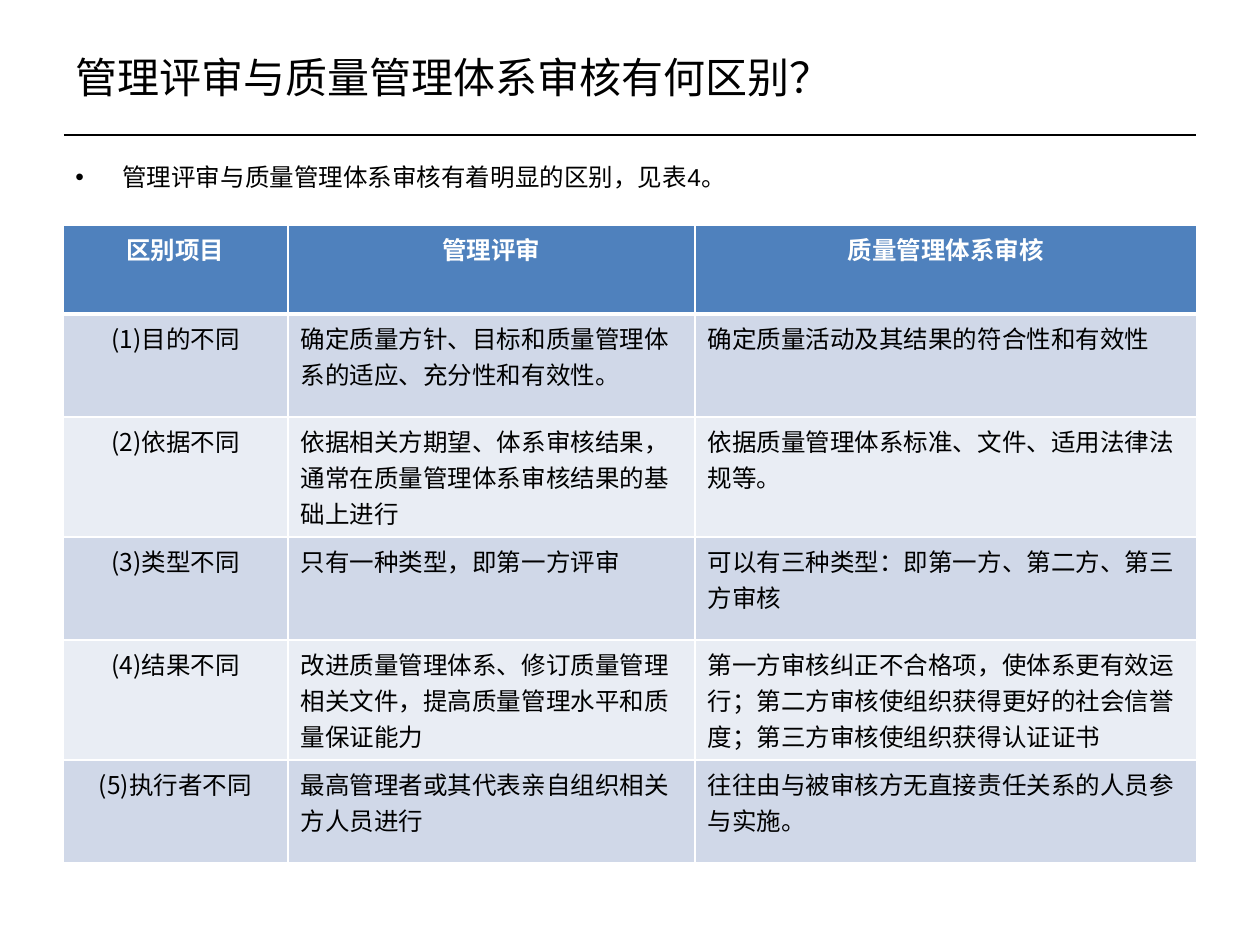
from typing import NamedTuple

import pptx
import pptx.dml.color
import pptx.enum.shapes
import pptx.enum.text
import pptx.oxml
import pptx.oxml.ns
import pptx.util
from lxml import etree

PX = 914400 / 126
ALIGN = pptx.enum.text.PP_ALIGN
ANCHOR = pptx.enum.text.MSO_ANCHOR
CJK_FONT = "Noto Sans CJK SC"
BLACK, WHITE, HEADER_BLUE = "000000", "FFFFFF", "4F81BD"
BANDS = ("D0D8E8", "E9EDF4")

COLUMN_WIDTHS = (225, 407, 502)
HEADER_HEIGHT, ROW_HEIGHT, TALL_ROW_HEIGHT = 89, 103, 120
HEADINGS = ("区别项目", "管理评审", "质量管理体系审核")


class Difference(NamedTuple):
    item: str
    review: str
    audit: str
    height: int = ROW_HEIGHT


class TextStyle(NamedTuple):
    size: int
    font: str
    color: str = BLACK
    bold: bool = False


DIFFERENCES = (
    Difference("目的不同", "确定质量方针、目标和质量管理体系的适应、充分性和有效性。",
               "确定质量活动及其结果的符合性和有效性"),
    Difference("依据不同", "依据相关方期望、体系审核结果，通常在质量管理体系审核结果的基础上进行",
               "依据质量管理体系标准、文件、适用法律法规等。", TALL_ROW_HEIGHT),
    Difference("类型不同", "只有一种类型，即第一方评审",
               "可以有三种类型：即第一方、第二方、第三方审核"),
    Difference("结果不同", "改进质量管理体系、修订质量管理相关文件，提高质量管理水平和质量保证能力",
               "第一方审核纠正不合格项，使体系更有效运行；"
               "第二方审核使组织获得更好的社会信誉度；第三方审核使组织获得认证证书",
               TALL_ROW_HEIGHT),
    Difference("执行者不同", "最高管理者或其代表亲自组织相关方人员进行",
               "往往由与被审核方无直接责任关系的人员参与实施。"),
)

TITLE = TextStyle(24, "Arial")
BODY = TextStyle(14, "Arial")
HEADING = TextStyle(14, "Calibri", WHITE, True)
LABEL = TextStyle(14, CJK_FONT)
CELL = TextStyle(14, "Calibri")


def px(length: int) -> int:
    return round(length * PX)


def rgb(color: str) -> pptx.dml.color.RGBColor:
    return pptx.dml.color.RGBColor.from_string(color)


def style_text(para, style: TextStyle) -> None:
    for span in para.runs:
        span.font.size = pptx.util.Pt(style.size)
        span.font.bold = style.bold
        span.font.color.rgb = rgb(style.color)
        span.font.name = style.font
        properties = span._r.get_or_add_rPr()
        etree.SubElement(properties, pptx.oxml.ns.qn("a:ea"), typeface=CJK_FONT)


def add_text(page, left: int, top: int, width: int, height: int,
             text: str, style: TextStyle, anchor=ANCHOR.TOP):
    box = page.shapes.add_textbox(px(left), px(top), px(width), px(height))
    frame = box.text_frame
    frame.word_wrap = True
    frame.vertical_anchor = anchor
    frame.text = text
    style_text(frame.paragraphs[0], style)
    return frame.paragraphs[0]


def add_bullet(para, indent: int) -> None:
    """Give the paragraph a round bullet with a hanging indent."""
    properties = para._p.get_or_add_pPr()
    properties.set("marL", str(px(indent)))
    properties.set("indent", str(-px(indent)))
    etree.SubElement(properties, pptx.oxml.ns.qn("a:buFont"), typeface="Arial")
    etree.SubElement(properties, pptx.oxml.ns.qn("a:buChar"), char="•")


def add_rule(page, left: int, right: int, y: int) -> None:
    rule = page.shapes.add_connector(
        pptx.enum.shapes.MSO_CONNECTOR.STRAIGHT, px(left), px(y), px(right), px(y))
    rule.line.color.rgb = rgb(BLACK)
    rule.line.width = pptx.util.Pt(1.5)
    etree.SubElement(rule._element.spPr, pptx.oxml.ns.qn("a:effectLst"))


def set_borders(cell, top: int, bottom: int) -> None:
    """Draw white borders; top and bottom widths are in points."""
    properties = cell._tc.get_or_add_tcPr()
    for side, width in (("L", 1), ("R", 1), ("T", top), ("B", bottom)):
        properties.append(pptx.oxml.parse_xml(
            f'<a:ln{side} {pptx.oxml.ns.nsdecls("a")} w="{pptx.util.Pt(width)}">'
            f'<a:solidFill><a:srgbClr val="{WHITE}"/></a:solidFill></a:ln{side}>'))


def fill_cell(cell, text: str, style: TextStyle, fill: str, centred: bool) -> None:
    cell.fill.solid()
    cell.fill.fore_color.rgb = rgb(fill)
    cell.text_frame.text = text
    para = cell.text_frame.paragraphs[0]
    para.alignment = ALIGN.CENTER if centred else ALIGN.LEFT
    style_text(para, style)


def add_comparison(page, left: int, top: int) -> None:
    heights = [HEADER_HEIGHT] + [difference.height for difference in DIFFERENCES]
    table = page.shapes.add_table(
        len(heights), len(COLUMN_WIDTHS), px(left), px(top),
        px(sum(COLUMN_WIDTHS)), px(sum(heights))).table
    table.horz_banding = False
    for column, width in zip(table.columns, COLUMN_WIDTHS):
        column.width = px(width)
    for row, height in zip(table.rows, heights):
        row.height = px(height)

    for column, heading in enumerate(HEADINGS):
        cell = table.cell(0, column)
        set_borders(cell, top=1, bottom=3)
        fill_cell(cell, heading, HEADING, HEADER_BLUE, centred=True)
    for row, difference in enumerate(DIFFERENCES, start=1):
        texts = (f"({row}){difference.item}", difference.review, difference.audit)
        for column, text in enumerate(texts):
            cell = table.cell(row, column)
            is_label = column == 0
            set_borders(cell, top=3 if row == 1 else 1, bottom=1)
            fill_cell(cell, text, LABEL if is_label else CELL,
                      BANDS[(row - 1) % 2], centred=is_label)


def main() -> None:
    deck = pptx.Presentation()
    deck.slide_width, deck.slide_height = px(1260), px(945)
    page = deck.slides.add_slide(deck.slide_layouts[6])
    add_rule(page, 64, 1196, 135)
    add_text(page, 63, 38, 1134, 77, "管理评审与质量管理体系审核有何区别？",
             TITLE, ANCHOR.MIDDLE)
    intro = add_text(page, 63, 156, 1134, 59,
                     "管理评审与质量管理体系审核有着明显的区别，见表4。", BODY)
    add_bullet(intro, 47)
    add_comparison(page, 63, 225)
    deck.save("out.pptx")


if __name__ == "__main__":
    main()
